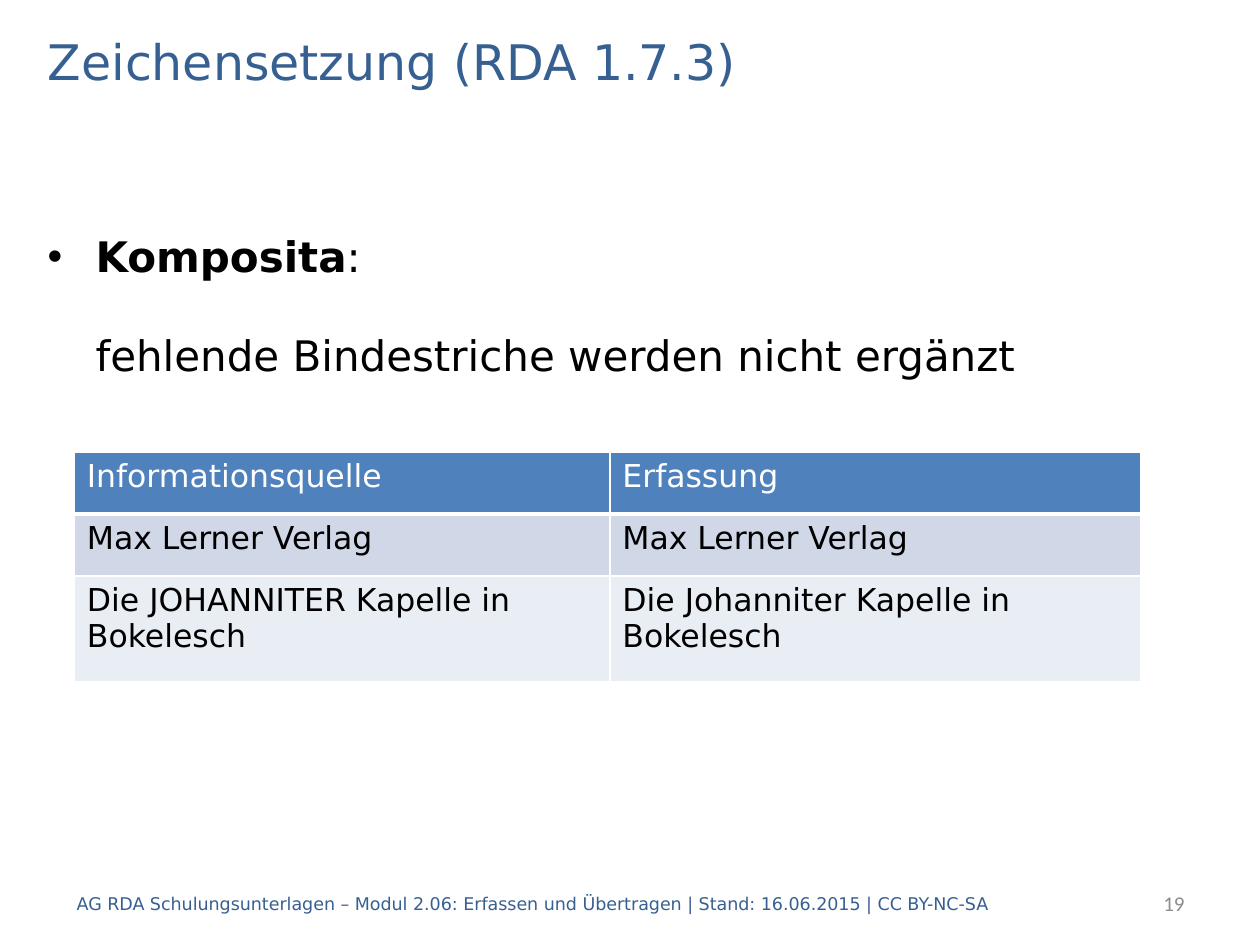
from pptx import Presentation
from pptx.dml.color import RGBColor
from pptx.enum.text import MSO_ANCHOR, PP_ALIGN
from pptx.oxml.ns import qn
from pptx.util import Inches, Pt
from lxml.etree import SubElement

COLORS = {"title": "376092", "text": "000000", "number": "8C8C8C", "white": "FFFFFF",
          "header": "4F81BD", "odd": "D0D8E8", "even": "E9EDF4"}
FONT = "DejaVu Sans"
TITLE = "Zeichensetzung (RDA 1.7.3)"
BULLET = "Komposita"
RULE = "fehlende Bindestriche werden nicht ergänzt"
FOOTER = ("AG RDA Schulungsunterlagen – Modul 2.06: Erfassen und Übertragen"
          " | Stand: 16.06.2015 | CC BY-NC-SA")
ROWS = [("Informationsquelle", "Erfassung"),
        ("Max Lerner Verlag", "Max Lerner Verlag"),
        ("Die JOHANNITER Kapelle in Bokelesch", "Die Johanniter Kapelle in Bokelesch")]
ROW_STYLES = [("header", "white"), ("odd", "text"), ("even", "text")]
COL_WIDTHS = [4.25, 4.21]
ROW_HEIGHTS = [0.49, 0.49, 0.84]


def add_run(p, text, size=18, color="text", font=FONT, bold=False):
    r = p.add_run()
    r.text = text
    r.font.size = Pt(size)
    r.font.name = font
    r.font.bold = bold
    r.font.color.rgb = RGBColor.from_string(COLORS[color])


def place(sp, left, top, width, height, anchor=MSO_ANCHOR.MIDDLE):
    sp.left, sp.top, sp.width, sp.height = map(Inches, (left, top, width, height))
    tf = sp.text_frame
    tf.word_wrap = True
    tf.vertical_anchor = anchor
    return tf.paragraphs[0]


def add_box(s, *box, **kwargs):
    return place(s.shapes.add_textbox(0, 0, 0, 0), *box, **kwargs)


def set_indent(p, first, bullet=None):
    pPr = p._p.get_or_add_pPr()
    pPr.set("marL", str(Inches(0.38)))
    pPr.set("indent", str(Inches(first)))
    if bullet:
        SubElement(pPr, qn("a:buFont")).set("typeface", "Arial")
        SubElement(pPr, qn("a:buChar")).set("char", bullet)
    else:
        SubElement(pPr, qn("a:buNone"))


def set_borders(cell, bottom):
    tcPr = cell._tc.get_or_add_tcPr()
    for i, (side, width) in enumerate((("L", 1), ("R", 1), ("T", 1), ("B", bottom))):
        ln = tcPr.makeelement(qn("a:ln" + side), {"w": str(Pt(width))})
        fill = SubElement(ln, qn("a:solidFill"))
        SubElement(fill, qn("a:srgbClr")).set("val", COLORS["white"])
        tcPr.insert(i, ln)


prs = Presentation()
prs.slide_width, prs.slide_height = Inches(10), Inches(7.5)
s = prs.slides.add_slide(prs.slide_layouts[5])

p = place(s.shapes.title, 0.28, 0.2, 9.45, 0.56)
p.alignment = PP_ALIGN.LEFT
add_run(p, TITLE, size=28, color="title")

sp = s.shapes.add_textbox(0, 0, 0, 0)
p = place(sp, 0.28, 1.78, 9.45, 5.12, anchor=MSO_ANCHOR.TOP)
set_indent(p, -0.38, bullet="•")
add_run(p, BULLET, size=24, bold=True)
add_run(p, ":", size=24)
p = sp.text_frame.add_paragraph()
p.space_before = Pt(28)
set_indent(p, 0)
add_run(p, RULE, size=24)

p = add_box(s, 7.91, 6.97, 1.59, 0.4)
p.alignment = PP_ALIGN.RIGHT
add_run(p, "19", size=12, color="number", font="Calibri")
p = add_box(s, 0.51, 6.97, 8.35, 0.4)
add_run(p, FOOTER, size=10, color="title")

table = s.shapes.add_table(len(ROWS), len(COL_WIDTHS), Inches(0.59), Inches(3.59),
                           Inches(sum(COL_WIDTHS)), Inches(sum(ROW_HEIGHTS))).table
for col, width in zip(table.columns, COL_WIDTHS):
    col.width = Inches(width)
for i, (texts, (fill, color)) in enumerate(zip(ROWS, ROW_STYLES)):
    table.rows[i].height = Inches(ROW_HEIGHTS[i])
    for j, text in enumerate(texts):
        cell = table.cell(i, j)
        cell.fill.solid()
        cell.fill.fore_color.rgb = RGBColor.from_string(COLORS[fill])
        set_borders(cell, bottom=3 if i == 0 else 1)
        add_run(cell.text_frame.paragraphs[0], text, color=color)

prs.save("out.pptx")
